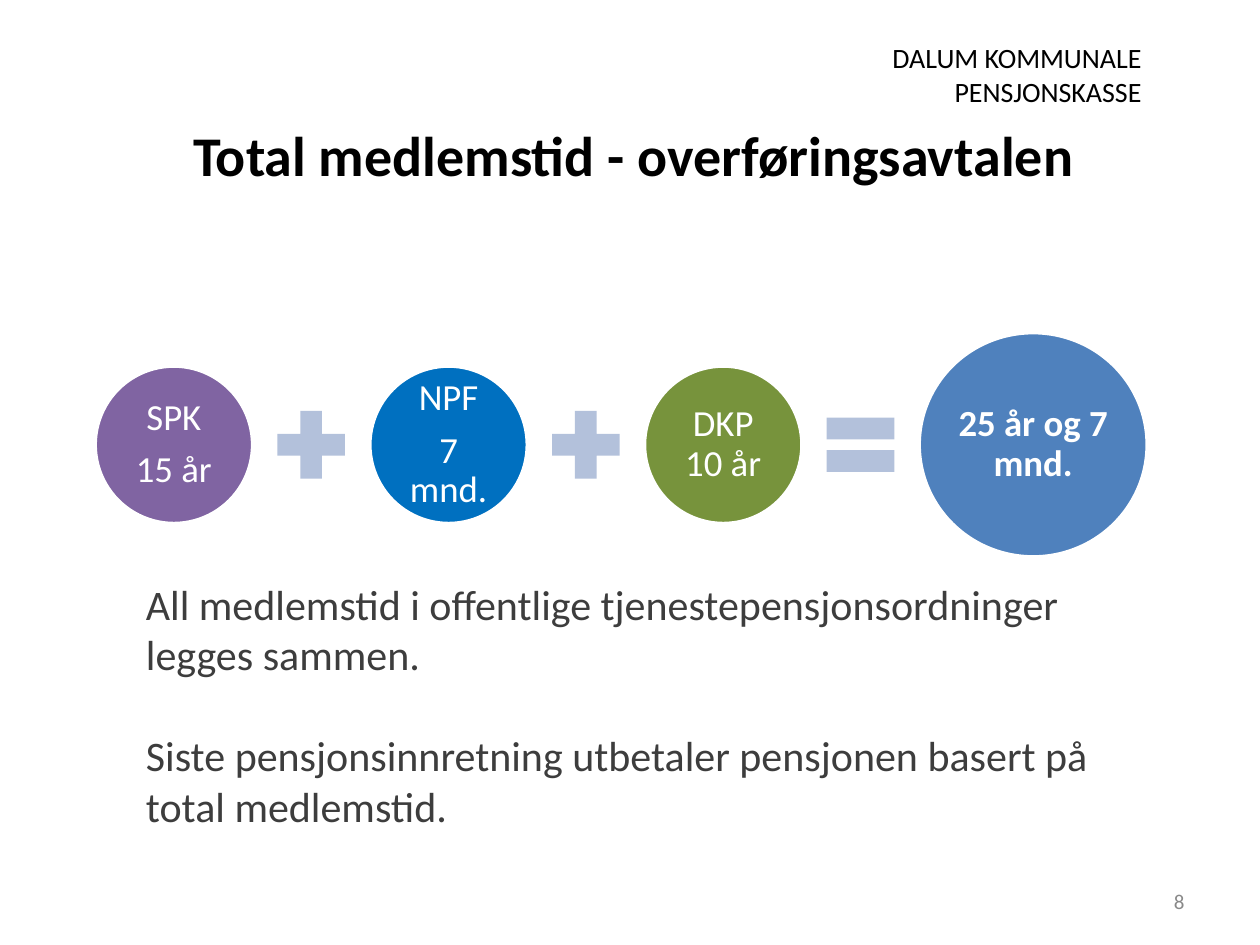
from pptx import Presentation
from pptx.dml.color import RGBColor
from pptx.enum.shapes import MSO_SHAPE
from pptx.enum.text import MSO_ANCHOR, PP_ALIGN
from pptx.util import Inches, Pt

OVAL, PLUS, EQUAL = MSO_SHAPE.OVAL, MSO_SHAPE.MATH_PLUS, MSO_SHAPE.MATH_EQUAL
LEFT, CENTER, RIGHT = PP_ALIGN.LEFT, PP_ALIGN.CENTER, PP_ALIGN.RIGHT
TOP, MIDDLE = MSO_ANCHOR.TOP, MSO_ANCHOR.MIDDLE
TITLE_ONLY = 5


def color(value):
    return RGBColor.from_string(value)


class SlideBuilder:
    font = "Calibri"
    black, white, grey, body = "000000", "FFFFFF", "898989", "3D3D3D"
    operator_fill = "B3C1DB"

    def __init__(self, presentation):
        self.slide = presentation.slides.add_slide(
            presentation.slide_layouts[TITLE_ONLY])

    def set_lines(self, frame, lines, size, text_color, align, bold=False,
                  gap=0, line_spacing=None):
        """Fill a text frame, one paragraph per line, gap points apart."""
        frame.word_wrap = True
        for index, line in enumerate(lines):
            paragraph = frame.add_paragraph() if index else frame.paragraphs[0]
            paragraph.text = line
            paragraph.alignment = align
            paragraph.space_before = Pt(gap if index else 0)
            if line_spacing:
                paragraph.line_spacing = line_spacing
            for run in paragraph.runs:
                run.font.name = self.font
                run.font.size = Pt(size)
                run.font.bold = bold
                run.font.color.rgb = color(text_color)

    def title(self, text, left, top, width, height):
        shape = self.slide.shapes.title
        shape.left, shape.top = Inches(left), Inches(top)
        shape.width, shape.height = Inches(width), Inches(height)
        shape.text_frame.vertical_anchor = MIDDLE
        self.set_lines(shape.text_frame, [text], 32, self.black, CENTER,
                       bold=True)

    def text(self, lines, left, top, width, height, size, text_color,
             align=LEFT, gap=0, anchor=TOP):
        shape = self.slide.shapes.add_textbox(
            Inches(left), Inches(top), Inches(width), Inches(height))
        shape.text_frame.vertical_anchor = anchor
        self.set_lines(shape.text_frame, lines, size, text_color, align,
                       gap=gap)

    def table(self, rows, left, top, width, row_height):
        table = self.slide.shapes.add_table(
            len(rows), 1, Inches(left), Inches(top), Inches(width),
            Inches(row_height * len(rows))).table
        table.first_row = table.horz_banding = False
        for index, text in enumerate(rows):
            cell = table.cell(index, 0)
            cell.fill.background()
            cell.margin_left = cell.margin_right = Inches(0.05)
            cell.margin_top = cell.margin_bottom = 0
            self.set_lines(cell.text_frame, [text], 16, self.black, RIGHT)

    def shape(self, kind, center_x, center_y, width, height, fill):
        shape = self.slide.shapes.add_shape(
            kind, Inches(center_x - width / 2), Inches(center_y - height / 2),
            Inches(width), Inches(height))
        shape.shadow.inherit = False
        shape.fill.solid()
        shape.fill.fore_color.rgb = color(fill)
        shape.line.fill.background()
        return shape

    def circle(self, lines, center_x, center_y, width, height, fill, bold=False):
        shape = self.shape(OVAL, center_x, center_y, width, height, fill)
        shape.line.color.rgb = color(self.white)
        shape.line.width = Pt(2)
        frame = shape.text_frame
        frame.vertical_anchor = MIDDLE
        frame.margin_left = frame.margin_right = Inches(0.03)
        frame.margin_top = frame.margin_bottom = Inches(0.03)
        self.set_lines(frame, lines, 21, self.white, CENTER, bold,
                       gap=7.35, line_spacing=0.9)

    def operator(self, kind, center_x, center_y):
        self.shape(kind, center_x, center_y, 0.73, 0.73, self.operator_fill)


def main():
    presentation = Presentation()
    presentation.slide_width = Inches(10)
    presentation.slide_height = Inches(7.5)
    builder = SlideBuilder(presentation)

    # Header, page number and title
    builder.table(["DALUM KOMMUNALE", "PENSJONSKASSE"], 6.9, 0.33, 2.21, 0.27)
    builder.text(["8"], 7.17, 6.95, 2.33, 0.4, 12, builder.grey, RIGHT,
                 anchor=MIDDLE)
    builder.title("Total medlemstid - overføringsavtalen", 0.53, 0.6, 9, 1.25)

    # Equation: three membership periods, each followed by an operator
    center_y, first_x, step = 3.53, 1.38, 2.18
    terms = [
        (["SPK", "15 år"], "8064A2", PLUS),
        (["NPF", "7 mnd."], "0070C0", PLUS),
        (["DKP 10 år"], "77933C", EQUAL),
    ]
    for index, (lines, fill, operator) in enumerate(terms):
        center_x = first_x + index * step
        builder.circle(lines, center_x, center_y, 1.25, 1.25, fill)
        builder.operator(operator, center_x + step / 2, center_y)
    builder.circle(["25 år og 7 mnd."], 8.2, center_y, 1.81, 1.78, "4F81BD",
                   bold=True)

    # Explanation
    builder.text(
        ["All medlemstid i offentlige tjenestepensjonsordninger legges sammen.",
         "Siste pensjonsinnretning utbetaler pensjonen basert på total medlemstid."],
        1.06, 4.54, 7.94, 2.12, 24, builder.body, gap=29)

    presentation.save("out.pptx")


if __name__ == "__main__":
    main()
